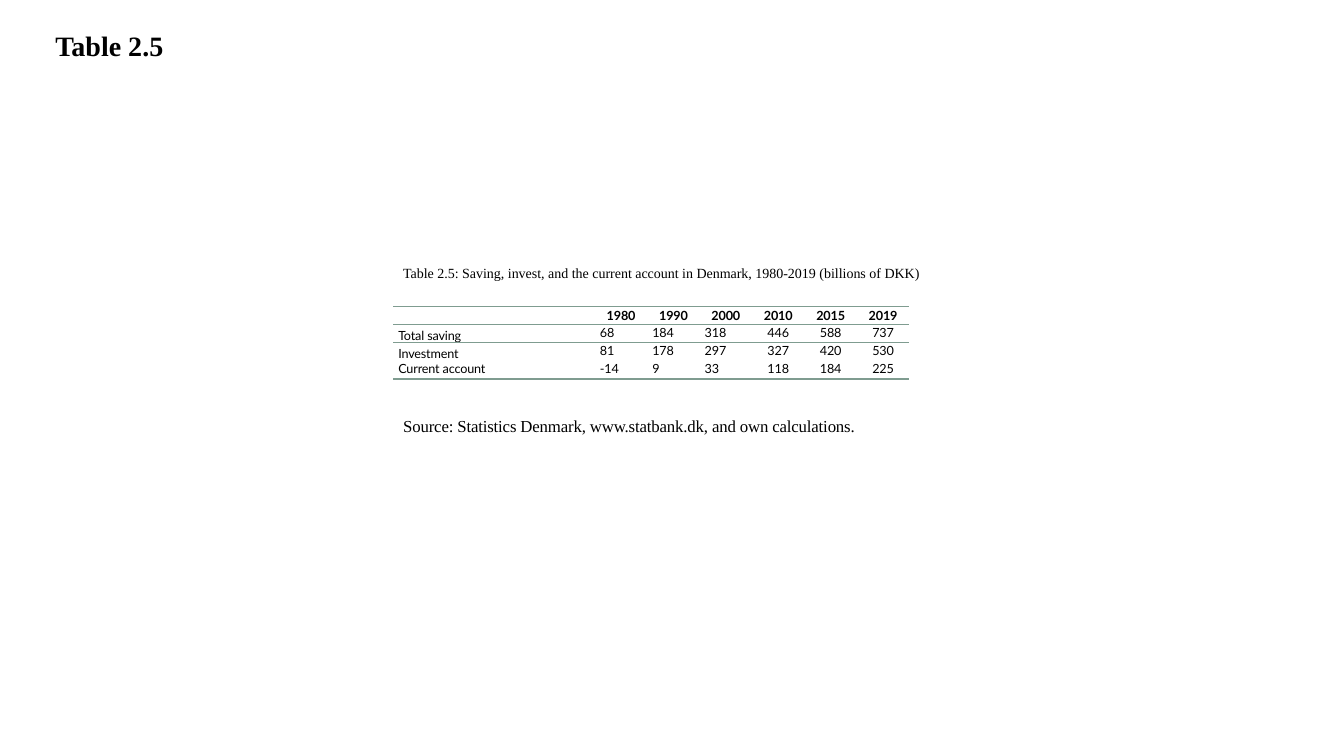
import pptx
import pptx.util
import pptx.dml.color
import pptx.enum.text
import lxml.etree

Inches, Pt = pptx.util.Inches, pptx.util.Pt
ALIGN, ANCHOR = pptx.enum.text.PP_ALIGN, pptx.enum.text.MSO_ANCHOR
BLACK = pptx.dml.color.RGBColor(0x00, 0x00, 0x00)
RULE_GREEN = pptx.dml.color.RGBColor(0x7F, 0x9C, 0x90)
DRAWING = "{http://schemas.openxmlformats.org/drawingml/2006/main}"
PLAIN_STYLE = "{2D5ABB26-0587-4C30-8999-92F81FD0307C}"

LEFT, LABEL_WIDTH, YEAR_WIDTH, ROW_HEIGHT = 3.9, 2, 0.52, 0.18


def write(paragraph, text, look, spacing=0):
    run = paragraph.add_run()
    run.text = text
    run.font.color.rgb = BLACK
    for key, value in look.items():
        setattr(run.font, key, value)
    if spacing:
        run.font._element.set("spc", str(spacing))


def add_rule(cell, edge):
    line = lxml.etree.Element(DRAWING + edge, w=str(Pt(1)))
    fill = lxml.etree.SubElement(line, DRAWING + "solidFill")
    lxml.etree.SubElement(fill, DRAWING + "srgbClr", val=str(RULE_GREEN))
    cell._tc.get_or_add_tcPr().insert(0, line)


deck = pptx.Presentation()
deck.slide_width, deck.slide_height = Inches(13.33), Inches(7.5)
slide = deck.slides.add_slide(deck.slide_layouts[6])

# Heading, caption and source line
serif = {"name": "Times New Roman"}
passages = [
    ("Table 2.5", (0.45, 0.27, 1.98, 0.97), True,
     {"size": Pt(20), "bold": True}, {"line_spacing": 0.9}, 0),
    ("Table 2.5: Saving, invest, and the current account in Denmark, "
     "1980-2019 (billions of DKK)", (LEFT, 2.58, 5.45, 0.44), False,
     {"size": Pt(10)}, {}, 0),
    ("Source: Statistics Denmark, www.statbank.dk, and own calculations.",
     (LEFT, 4.08, 8.59, 0.3), True, {"size": Pt(12)}, {"space_before": Pt(2)}, -10),
]
for text, place, wraps, look, layout, spacing in passages:
    passage = slide.shapes.add_textbox(*map(Inches, place)).text_frame
    passage.word_wrap = wraps
    for key, value in layout.items():
        setattr(passage.paragraphs[0], key, value)
    write(passage.paragraphs[0], text, serif | look, spacing)

# Accounts by year
accounts = [
    ("", "1980", "1990", "2000", "2010", "2015", "2019"),
    ("Total saving", "68", "184", "318", "446", "588", "737"),
    ("Investment", "81", "178", "297", "327", "420", "530"),
    ("Current account", "-14", "9", "33", "118", "184", "225"),
]
row_count, column_count = len(accounts), len(accounts[0])
account_table = slide.shapes.add_table(
    row_count, column_count, Inches(LEFT), Inches(3.04),
    Inches(LABEL_WIDTH + YEAR_WIDTH * (column_count - 1)),
    Inches(ROW_HEIGHT * row_count)).table
account_table.first_row = account_table.horz_banding = False
account_table._tbl.tblPr.find(DRAWING + "tableStyleId").text = PLAIN_STYLE
for index, column in enumerate(account_table.columns):
    column.width = Inches(YEAR_WIDTH if index else LABEL_WIDTH)
for row in account_table.rows:
    row.height = Inches(ROW_HEIGHT)

edges = {0: ("lnB", "lnT"), 1: ("lnT",), row_count - 1: ("lnB",)}
cell_format = {"margin_left": Inches(0.05), "margin_right": Inches(0.05),
               "margin_top": 0, "margin_bottom": 0}
for r, account in enumerate(accounts):
    for c, text in enumerate(account):
        cell = account_table.cell(r, c)
        if r == 0:
            anchor = ANCHOR.MIDDLE
        elif c == 0 and r < row_count - 1:
            anchor = ANCHOR.BOTTOM
        else:
            anchor = ANCHOR.TOP
        for key, value in (cell_format | {"vertical_anchor": anchor}).items():
            setattr(cell, key, value)
        cell.fill.background()
        entry = cell.text_frame.paragraphs[0]
        # Years and the last three columns are centred
        entry.alignment = ALIGN.CENTER if c > 3 or (r == 0 and c) else ALIGN.LEFT
        if text:
            write(entry, text, {"name": "Lato", "size": Pt(9), "bold": r == 0}, -10)
        else:
            lxml.etree.SubElement(entry._p, DRAWING + "endParaRPr", sz="900")
        for edge in edges.get(r, ()):
            add_rule(cell, edge)

deck.save("out.pptx")
